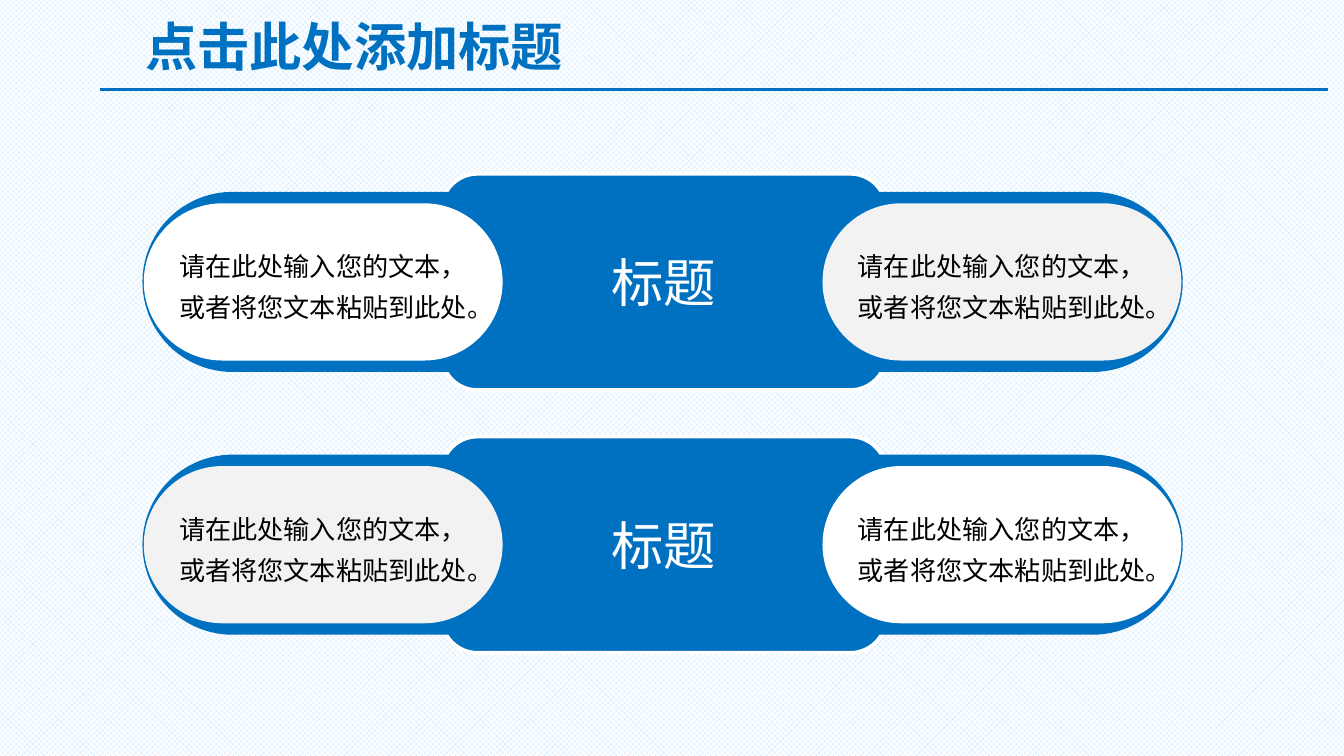
from dataclasses import dataclass

from lxml.etree import SubElement
from pptx import Presentation
from pptx.dml.color import RGBColor
from pptx.enum.dml import MSO_PATTERN
from pptx.enum.shapes import MSO_CONNECTOR, MSO_SHAPE
from pptx.enum.text import MSO_ANCHOR, PP_ALIGN
from pptx.oxml.ns import qn
from pptx.util import Inches, Pt

COLORS = {"blue": "0070C0", "white": "FFFFFF", "grey": "F2F2F2", "black": "000000", "trellis": "BFE4FF"}
FONT = "Noto Sans CJK SC"
WIDTH = Inches(10)
HEIGHT = WIDTH * 9 // 16
COLUMNS = 100
CELL = WIDTH / COLUMNS

AXIS = 49.3
FIRST_ROW, ROW_PITCH = 20.98, 19.55
SHELL_OFFSET, CAPSULE_OFFSET = 23.45, 25.25
BODY = "请在此处输入您的文本，或者将您文本粘贴到此处。"


@dataclass(frozen=True)
class Panel:
    width: float
    height: float
    corner: float


@dataclass(frozen=True)
class Row:
    heading: str
    left_fill: str
    right_fill: str


BAND = Panel(33.1, 16.1, 1 / 6)
SHELL = Panel(30.5, 13.4, 0.5)
CAPSULE = Panel(26.7, 11.7, 0.5)
ROWS = [Row("标题", "white", "grey"), Row("标题", "grey", "white")]


def grid(cells: float) -> int:
    return round(cells * CELL)


def color(name: str) -> RGBColor:
    return RGBColor.from_string(COLORS[name])


def write(shape, text: str, size: int, ink: str, bold: bool = False) -> None:
    para = shape.text_frame.paragraphs[0]
    para.add_run().text = text
    font = para.font
    font.name, font.size, font.bold = FONT, Pt(size), bold
    font.color.rgb = color(ink)
    SubElement(font._element, qn("a:ea")).set("typeface", FONT)


def add_panel(shapes, panel: Panel, center_x: float, center_y: float, fill: str):
    box = shapes.add_shape(
        MSO_SHAPE.ROUNDED_RECTANGLE,
        grid(center_x - panel.width / 2), grid(center_y - panel.height / 2),
        grid(panel.width), grid(panel.height),
    )
    box.adjustments[0] = panel.corner
    box.shadow.inherit = False
    box.fill.solid()
    box.fill.fore_color.rgb = color(fill)
    box.line.fill.background()
    frame = box.text_frame
    frame.word_wrap = True
    frame.vertical_anchor = MSO_ANCHOR.MIDDLE
    frame.paragraphs[0].alignment = PP_ALIGN.CENTER
    return box


def add_band(page, center_y: float, heading: str) -> None:
    band = add_panel(page.shapes, BAND, AXIS + 0.1, center_y, "blue")
    band.line.color.rgb = color("white")
    band.line.width = Pt(2)
    write(band, heading, 28, "white")


def add_capsule(page, side: int, center_y: float, fill: str) -> None:
    group = page.shapes.add_group_shape()
    add_panel(group.shapes, SHELL, AXIS + side * SHELL_OFFSET, center_y, "blue")
    capsule = add_panel(group.shapes, CAPSULE, AXIS + side * CAPSULE_OFFSET, center_y, fill)
    frame = capsule.text_frame
    frame.margin_left = frame.margin_right = Inches(0.08)
    frame.margin_top = frame.margin_bottom = 0
    frame.paragraphs[0].line_spacing = 1.3
    write(capsule, BODY, 14, "black")


def add_header(page) -> None:
    rule = page.shapes.add_connector(
        MSO_CONNECTOR.STRAIGHT, grid(7.45), grid(6.65), grid(98.8), grid(6.65)
    )
    rule.line.color.rgb = color("blue")
    rule.line.width = Pt(1.5)
    SubElement(rule._element.spPr, qn("a:effectLst"))
    title = page.shapes.add_textbox(grid(9.84), grid(0.6), grid(90), grid(6.2))
    title.text_frame.word_wrap = True
    write(title, "点击此处添加标题", 28, "blue", bold=True)


def main() -> None:
    deck = Presentation()
    deck.slide_width, deck.slide_height = WIDTH, HEIGHT
    page = deck.slides.add_slide(deck.slide_layouts[6])
    background = page.background.fill
    background.patterned()
    background.pattern = MSO_PATTERN.TRELLIS
    background.fore_color.rgb = color("trellis")
    background.back_color.rgb = color("white")

    add_header(page)
    for index, row in enumerate(ROWS):
        center_y = FIRST_ROW + index * ROW_PITCH
        add_band(page, center_y, row.heading)
        add_capsule(page, -1, center_y, row.left_fill)
        add_capsule(page, 1, center_y, row.right_fill)
    deck.save("out.pptx")


if __name__ == "__main__":
    main()
